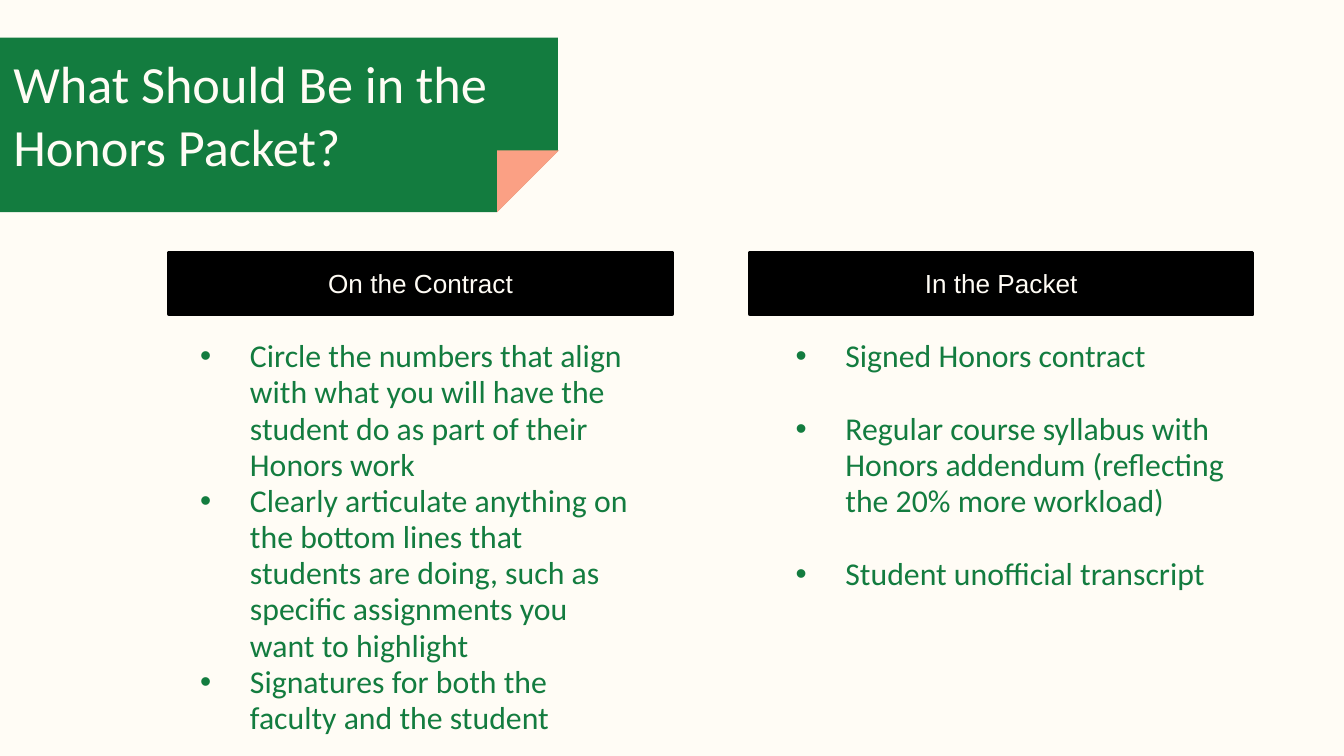
from lxml import etree
from pptx import Presentation
from pptx.dml.color import RGBColor
from pptx.enum.shapes import MSO_SHAPE as Shape
from pptx.enum.text import MSO_ANCHOR as Anchor, MSO_AUTO_SIZE as AutoSize, PP_ALIGN as Align
from pptx.oxml.ns import qn
from pptx.util import Inches, Pt

COLORS = {"cream": "FFFCF5", "green": "137C3F", "coral": "FBA084", "black": "000000"}


class HonorsPage:
    """Holds the style and the slide being built."""

    text_font = "Calibri"
    header_font = "Arial"

    def __init__(self, deck):
        self.page = deck.slides.add_slide(deck.slide_layouts.get_by_name("Two Content"))
        background = self.page.background.fill
        background.solid()
        background.fore_color.rgb = self.color("cream")

    def color(self, name):
        return RGBColor.from_string(COLORS[name])

    def style(self, para, font, size, color):
        para.font.name = font
        para.font.size = Pt(size)
        para.font.color.rgb = self.color(color)

    def shape(self, kind, left, top, width, height, fill):
        shape = self.page.shapes.add_shape(
            kind, Inches(left), Inches(top), Inches(width), Inches(height))
        shape.shadow.inherit = False
        shape.fill.solid()
        shape.fill.fore_color.rgb = self.color(fill)
        shape.line.fill.background()
        return shape

    def flipped(self, kind, left, top, width, height, fill):
        shape = self.shape(kind, left, top, width, height, fill)
        shape.element.spPr.get_or_add_xfrm().set("flipV", "1")
        return shape

    def header(self, left, text):
        bar = self.shape(Shape.RECTANGLE, left, 1.88, 3.74, 0.46, "black")
        bar.line.color.rgb = self.color("black")
        bar.line.width = Pt(2)
        frame = bar.text_frame
        frame.vertical_anchor = Anchor.MIDDLE
        para = frame.paragraphs[0]
        para.text = text
        para.alignment = Align.CENTER
        self.style(para, self.header_font, 14, "cream")

    def placeholder(self, index, left, top, width, height):
        box = self.page.placeholders[index]
        box.left, box.top = Inches(left), Inches(top)
        box.width, box.height = Inches(width), Inches(height)
        frame = box.text_frame
        frame.word_wrap = True
        frame.auto_size = AutoSize.NONE
        frame.vertical_anchor = Anchor.TOP
        frame.margin_left = frame.margin_right = Inches(0.1)
        frame.margin_top = frame.margin_bottom = Inches(0.1)
        return frame

    def title(self, text):
        para = self.placeholder(0, 0, 0.28, 4.57, 1.14).paragraphs[0]
        para.text = text
        para.alignment = Align.LEFT
        self.style(para, self.text_font, 28, "cream")

    def bullet(self, para):
        props = para._p.get_or_add_pPr()
        props.set("marL", str(Inches(0.5)))
        props.set("indent", str(Inches(-0.37)))
        tint = etree.SubElement(props, qn("a:buClr"))
        etree.SubElement(tint, qn("a:srgbClr"), val=COLORS["green"])
        etree.SubElement(props, qn("a:buFont"), typeface=self.header_font)
        etree.SubElement(props, qn("a:buChar"), char="•")

    def bullets(self, index, left, height, items, gap=0):
        frame = self.placeholder(index, left, 2.42, 3.54, height)
        for number, item in enumerate(items):
            para = frame.add_paragraph() if number else frame.paragraphs[0]
            para.text = item
            self.bullet(para)
            para.line_spacing = 0.95
            para.space_before = Pt(gap if number else 0)
            self.style(para, self.text_font, 17, "green")


def main():
    deck = Presentation()
    deck.slide_width = Inches(10)
    deck.slide_height = deck.slide_width * 9 // 16
    slide = HonorsPage(deck)

    # Title banner with a folded corner, placed behind the title
    banner = slide.flipped(Shape.SNIP_1_RECTANGLE, 0, 0.28, 4.15, 1.3, "green")
    banner.adjustments[0] = 0.35
    fold = slide.flipped(Shape.RIGHT_TRIANGLE, 3.7, 1.12, 0.46, 0.46, "coral")
    tree = slide.page.shapes.element
    for place, part in enumerate((banner, fold), start=2):
        tree.insert(place, part.element)
    slide.title("What Should Be in the Honors Packet?")

    # Column headers
    slide.header(1.26, "On the Contract")
    slide.header(5.58, "In the Packet")

    # Column lists
    slide.bullets(1, 1.26, 3.46, [
        "Circle the numbers that align with what you will have the student do "
        "as part of their Honors work",
        "Clearly articulate anything on the bottom lines that students are doing, "
        "such as specific assignments you want to highlight",
        "Signatures for both the faculty and the student",
    ])
    slide.bullets(2, 5.69, 2.65, [
        "Signed Honors contract",
        "Regular course syllabus with Honors addendum "
        "(reflecting the 20% more workload)",
        "Student unofficial transcript",
    ], gap=19.5)

    deck.save("out.pptx")


if __name__ == "__main__":
    main()
